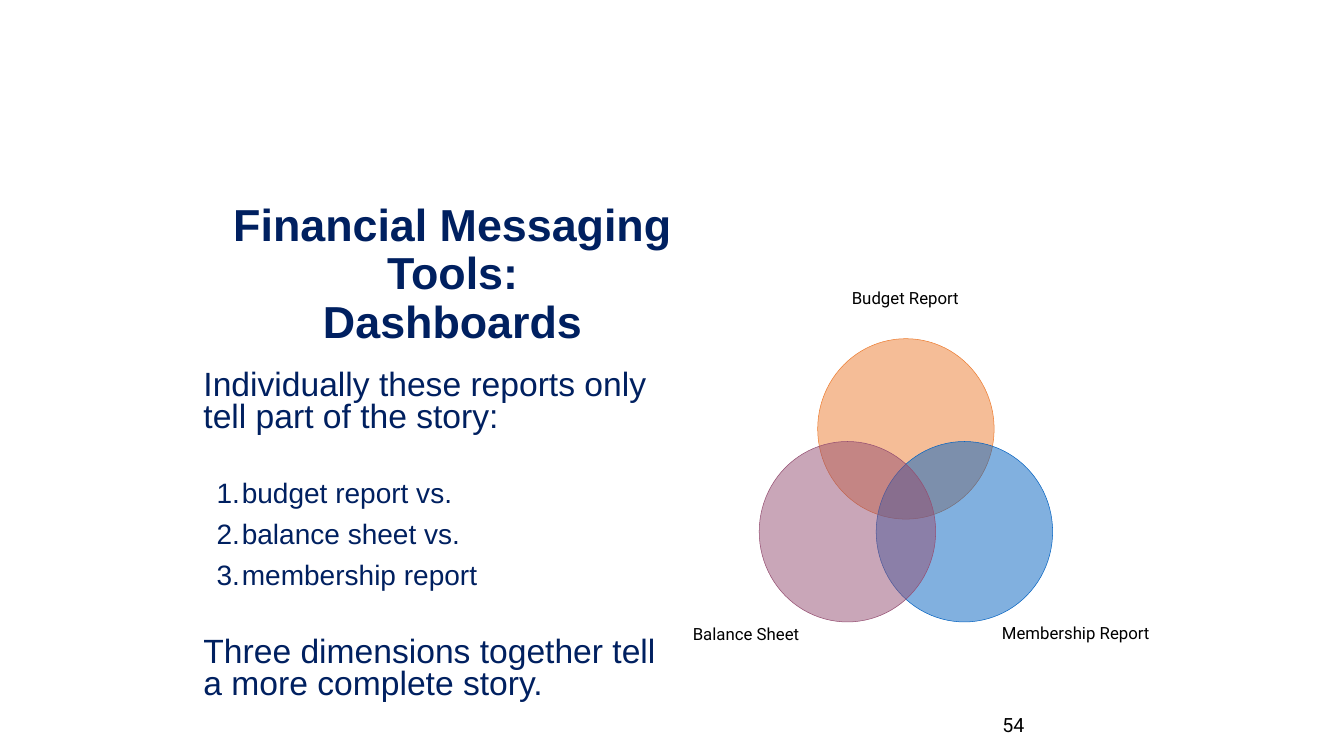
"""Build the financial dashboards slide with its three-report Venn diagram."""
from lxml.etree import SubElement
from pptx import Presentation
from pptx.dml.color import RGBColor
from pptx.enum.shapes import MSO_SHAPE
from pptx.enum.text import MSO_ANCHOR as Anchor, PP_ALIGN as Align
from pptx.oxml.ns import qn
from pptx.util import Inches, Pt

NAVY = RGBColor(0x00, 0x20, 0x60)
BLACK = RGBColor(0x00, 0x00, 0x00)
ORANGE = RGBColor(0xED, 0x7D, 0x31)
BLUE = RGBColor(0x05, 0x63, 0xC1)
PLUM = RGBColor(0x95, 0x4F, 0x72)

deck = Presentation()
deck.slide_width, deck.slide_height = Inches(13.33), Inches(7.5)
slide = deck.slides.add_slide(deck.slide_layouts[6])


def add_frame(left, top, width, height, anchor=Anchor.MIDDLE):
    box = slide.shapes.add_textbox(Inches(left), Inches(top), Inches(width), Inches(height))
    frame = box.text_frame
    frame.word_wrap = True
    frame.vertical_anchor = anchor
    return frame


def style(paragraph, size, name, color, align=Align.LEFT):
    paragraph.alignment = align
    paragraph.font.size = Pt(size)
    paragraph.font.name = name
    paragraph.font.color.rgb = color


title = add_frame(1.91, 1.96, 5.16, 1.54).paragraphs[0]
title.text = "Financial Messaging Tools:\vDashboards"
title.line_spacing = 0.9
style(title, 32, "Arial", NAVY, Align.CENTER)
title.font.bold = True

story = add_frame(1.86, 3.63, 4.85, 3.53, Anchor.TOP)
STORY_LINES = [
    ("Individually these reports only tell part of the story:", False, 0),
    ("budget report vs.", True, 33.5),
    ("balance sheet vs.", True, 10),
    ("membership report", True, 10),
    ("Three dimensions together tell a more complete story.", False, 33.5),
]
for index, (words, numbered, gap) in enumerate(STORY_LINES):
    line = story.add_paragraph() if index else story.paragraphs[0]
    line.text = words
    line.line_spacing = 0.8
    line.space_before = Pt(gap)
    properties = line._p.get_or_add_pPr()
    properties.set("marL", str(Inches(0.44 if numbered else 0.06)))
    properties.set("indent", str(Inches(-0.25 if numbered else 0)))
    if numbered:
        SubElement(properties, qn("a:buAutoNum"), type="arabicPeriod")
    style(line, 20 if numbered else 24, "Arial", NAVY)

LABEL_WIDTH = 1.8
REPORTS = [
    ("Budget Report", ORANGE, 8.11, 3.36, 8.98, 2.73),
    ("Membership Report", BLUE, 8.69, 4.38, 10.67, 6.05),
    ("Balance Sheet", PLUM, 7.53, 4.38, 7.4, 6.06),
]
for report, color, left, top, label_center, label_top in REPORTS:
    circle = slide.shapes.add_shape(
        MSO_SHAPE.OVAL, Inches(left), Inches(top), Inches(1.75), Inches(1.79))
    circle.shadow.inherit = False
    circle.fill.solid()
    circle.fill.fore_color.rgb = color
    tint = circle.fill._xPr.find(qn("a:solidFill"))[0]
    SubElement(tint, qn("a:alpha"), val="50000")
    circle.line.color.rgb = color
    circle.line.width = Pt(0.37)

    label = add_frame(label_center - LABEL_WIDTH / 2, label_top, LABEL_WIDTH, 0.45)
    label.margin_left = label.margin_right = label.margin_top = label.margin_bottom = 0
    label.paragraphs[0].text = report
    style(label.paragraphs[0], 12, "Roboto", BLACK, Align.CENTER)

page_number = add_frame(8.18, 6.94, 2.08, 0.5).paragraphs[0]
page_number.text = "54"
style(page_number, 14, "Roboto", BLACK, Align.RIGHT)

deck.save("out.pptx")
